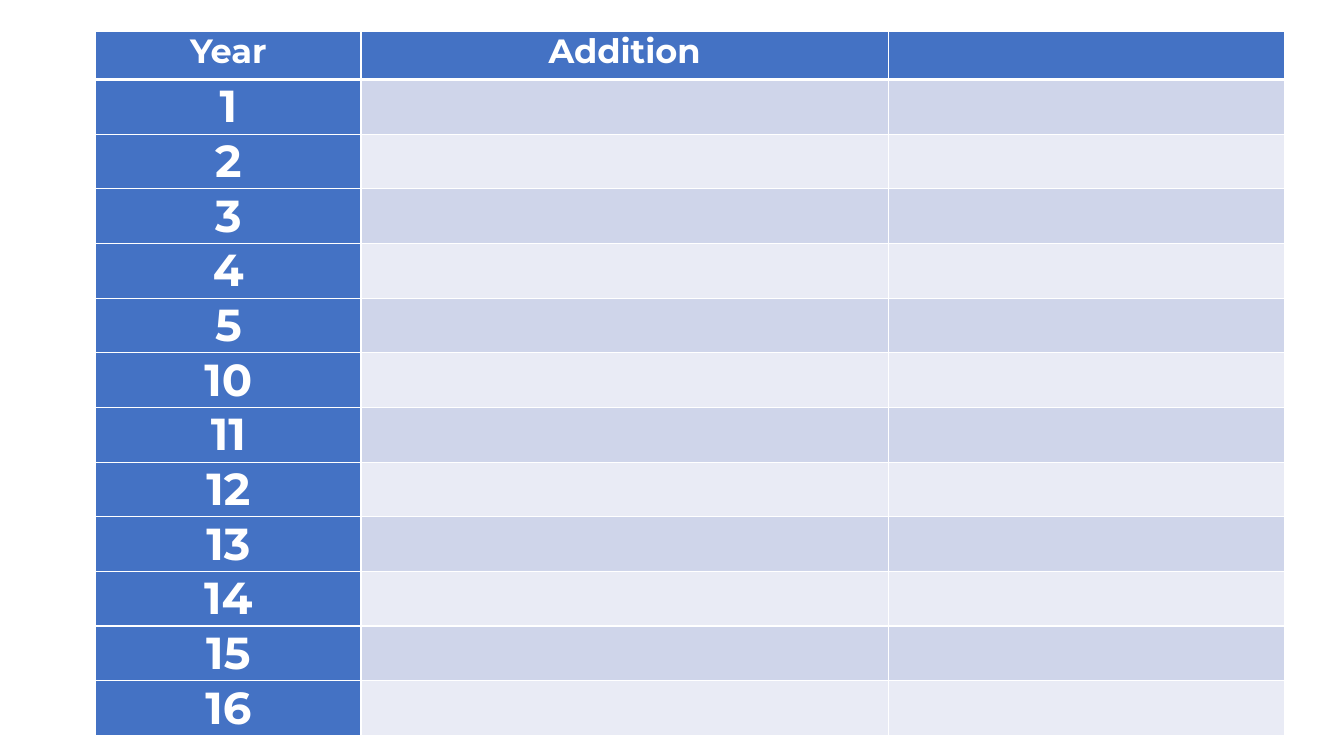
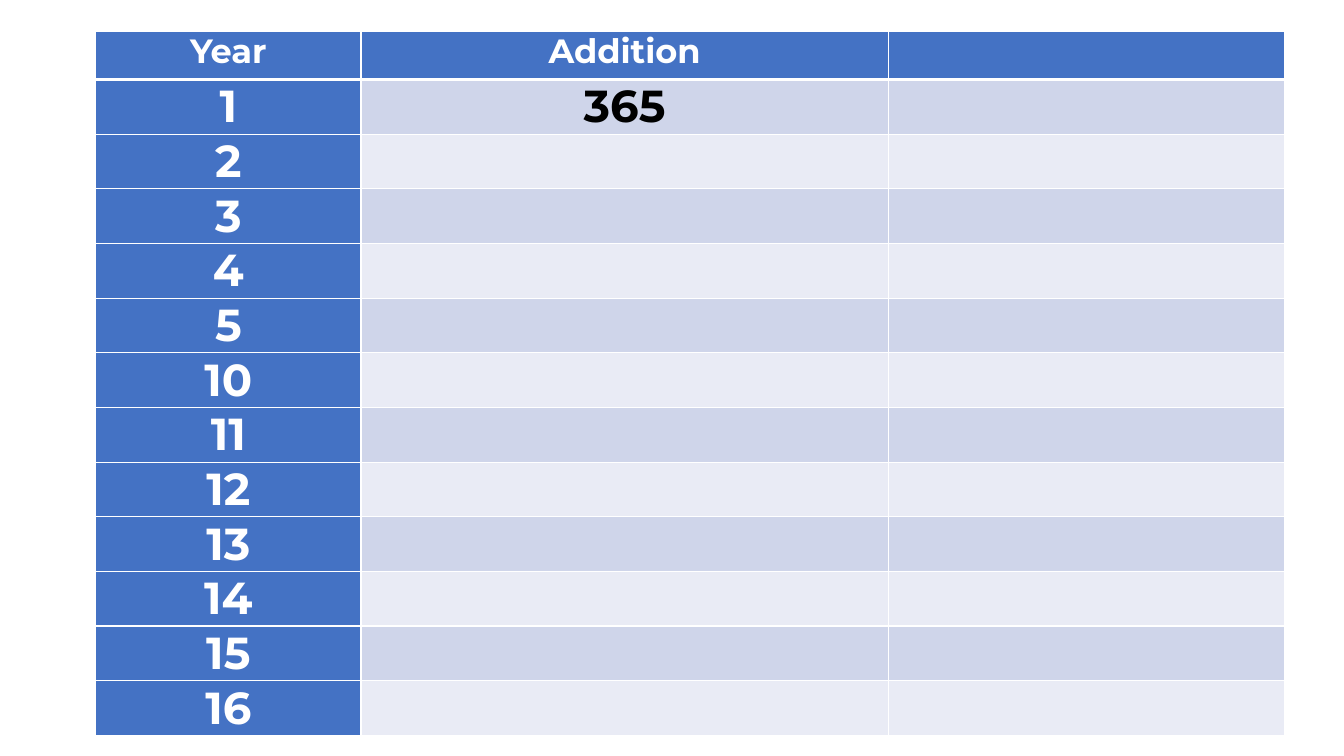
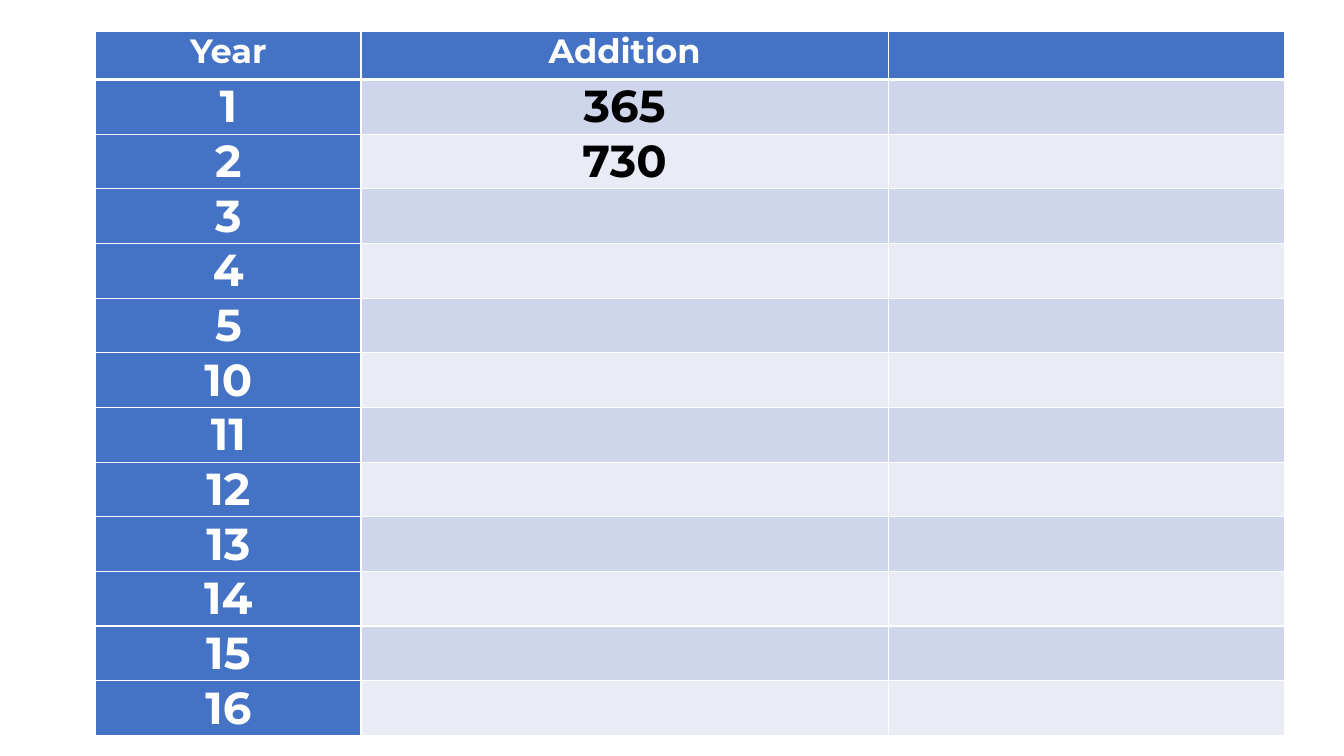
"""Build three slides that fill in a table of days added year by year."""
from lxml import etree
from pptx import Presentation
from pptx import util as u
from pptx.dml.color import RGBColor
from pptx.enum import text
from pptx.oxml import ns

COLORS = {
    "header": "4472C4",
    "band_dark": "CFD5EA",
    "band_light": "E9EBF5",
    "white": "FFFFFF",
    "black": "000000",
}
FONT = "Montserrat"
HEADINGS = ["Year", "Addition", ""]
YEARS = [1, 2, 3, 4, 5, 10, 11, 12, 13, 14, 15, 16]
DAYS_PER_YEAR = 365
COLUMN_WIDTHS = [2.63, 5.23, 3.93]
ROW_HEIGHT = 0.48
TABLE_BOX = [u.Inches(value) for value in (0.95, 0.31, 11.8, 6.88)]


def set_borders(cell, widths):
    """Draw white cell borders with the given widths in points."""
    properties = cell._tc.get_or_add_tcPr()
    for index, side in enumerate("LRTB"):
        line = etree.Element(ns.qn(f"a:ln{side}"), w=str(u.Pt(widths[side])))
        fill = etree.SubElement(line, ns.qn("a:solidFill"))
        etree.SubElement(fill, ns.qn("a:srgbClr"), val=COLORS["white"])
        properties.insert(index, line)


def fill_color(row, column):
    """Return the fill for a cell in the header, year column or bands."""
    if row == 0 or column == 0:
        return COLORS["header"]
    return COLORS["band_dark" if row % 2 else "band_light"]


def format_cell(cell, row, column, content):
    """Write one table cell and style it by its place."""
    cell.margin_left = cell.margin_right = u.Inches(0.07)
    cell.margin_top = cell.margin_bottom = 0
    cell.fill.solid()
    cell.fill.fore_color.rgb = RGBColor.from_string(fill_color(row, column))
    set_borders(cell, {"L": 1, "R": 1, "T": 3 if row == 1 else 1, "B": 3 if row == 0 else 1})
    if not content:
        return
    cell.text = content
    para = cell.text_frame.paragraphs[0]
    para.alignment = text.PP_ALIGN.CENTER
    para.font.name = FONT
    para.font.size = u.Pt(24 if row == 0 else 32)
    para.font.bold = True
    color = COLORS["white" if row == 0 or column == 0 else "black"]
    para.font.color.rgb = RGBColor.from_string(color)


def add_year_table(page, box, answers_shown):
    """Add the year table with the first answers filled in."""
    answers = [str(year * DAYS_PER_YEAR) for year in YEARS[:answers_shown]]
    answers += [""] * (len(YEARS) - answers_shown)
    rows = [HEADINGS] + [[str(year), answer, ""] for year, answer in zip(YEARS, answers)]
    frame = page.shapes.add_table(len(rows), len(HEADINGS), *box)
    table = frame.table
    for column, width in zip(table.columns, COLUMN_WIDTHS):
        column.width = u.Inches(width)
    for row_index, contents in enumerate(rows):
        table.rows[row_index].height = u.Inches(ROW_HEIGHT)
        for column_index, content in enumerate(contents):
            format_cell(table.cell(row_index, column_index), row_index, column_index, content)
    frame.width, frame.height = box[2:]


def main():
    """Build and save the deck."""
    deck = Presentation()
    deck.slide_width, deck.slide_height = u.Inches(13.33), u.Inches(7.5)
    blank_layout = deck.slide_layouts[6]
    for answers_shown in range(3):
        add_year_table(deck.slides.add_slide(blank_layout), TABLE_BOX, answers_shown)
    deck.save("out.pptx")


if __name__ == "__main__":
    main()
